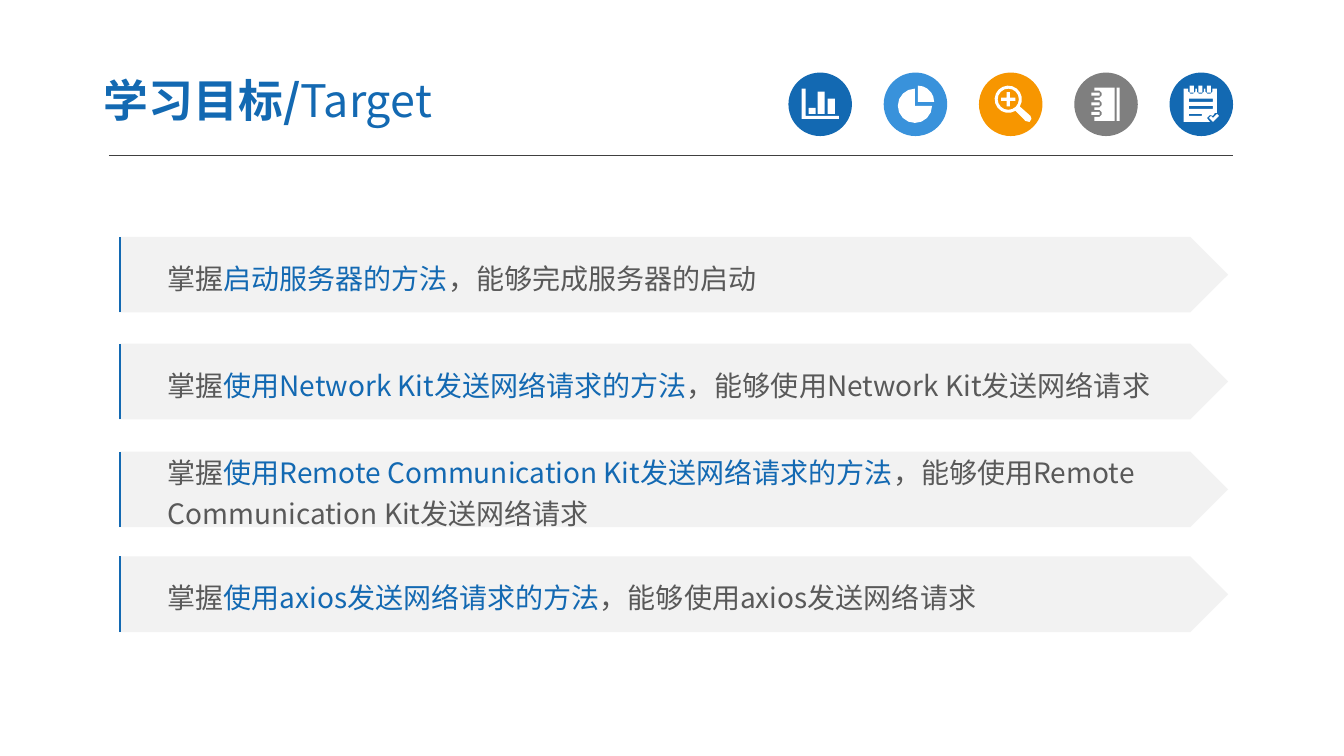
import math
import pptx
import pptx.util
import pptx.dml.color
import pptx.enum.shapes
import pptx.enum.text
import pptx.oxml.ns
import lxml.etree

Inches = pptx.util.Inches
SHAPE = pptx.enum.shapes.MSO_SHAPE
MIDDLE = pptx.enum.text.MSO_ANCHOR.MIDDLE
FONT = "Noto Sans CJK SC"
BLUE, SKY, ORANGE, GRAY, WHITE = "1369B2", "3992DB", "F79600", "7F7F7F", "FFFFFF"
BODY, PALE, RULE = "595959", "F2F2F2", "404040"

DISC = 0.63
DISC_LEFT, DISC_TOP, DISC_STEP = 7.82, 0.72, 0.945
ROW_LEFT, ROW_WIDTH, ROW_HEIGHT = 1.19, 10.99, 0.75

# Top of each row, then its lines of coloured spans
GOALS = [
    (2.35, [[("掌握", BODY), ("启动服务器的方法", BLUE), ("，能够完成服务器的启动", BODY)]]),
    (3.41, [[("掌握", BODY), ("使用Network Kit发送网络请求的方法", BLUE),
             ("，能够使用Network Kit发送网络请求", BODY)]]),
    (4.48, [[("掌握", BODY), ("使用Remote Communication Kit发送网络请求的方法", BLUE),
             ("，能够使用Remote", BODY)],
            [("Communication Kit发送网络请求", BODY)]]),
    (5.52, [[("掌握", BODY), ("使用axios发送网络请求的方法", BLUE),
             ("，能够使用axios发送网络请求", BODY)]]),
]


def rgb(color):
    return pptx.dml.color.RGBColor.from_string(color)


def add_span(para, text, size=20, color=BODY, bold=False):
    span = para.add_run()
    span.text = text
    span.font.size = pptx.util.Pt(size)
    span.font.bold = bold
    span.font.color.rgb = rgb(color)
    span.font.name = FONT
    east_asian = lxml.etree.SubElement(span.font._element, pptx.oxml.ns.qn("a:ea"))
    east_asian.set("typeface", FONT)


def paint(shape, color):
    shape.shadow.inherit = False
    shape.fill.solid()
    shape.fill.fore_color.rgb = rgb(color)
    shape.line.fill.background()


def add_filled(shapes, preset, left, top, width, height, color):
    box = shapes.add_shape(preset, Inches(left), Inches(top), Inches(width), Inches(height))
    paint(box, color)
    return box


def rect(left, top, width, height):
    right, bottom = left + width, top + height
    return [(left, top), (right, top), (right, bottom), (left, bottom)]


def arc(x, y, radius, start=0, end=360, steps=16):
    """Points clockwise along an arc, with angles in degrees from the right."""
    angles = [math.radians(start + (end - start) * step / steps) for step in range(steps + 1)]
    return [(x + radius * math.cos(angle), y + radius * math.sin(angle)) for angle in angles]


def bar_chart():
    axes = [(0.13, 0.16), (0.17, 0.16), (0.17, 0.43), (0.5, 0.43), (0.5, 0.46), (0.13, 0.46)]
    bars = ((0.2, 0.06), (0.29, 0.22), (0.39, 0.15))
    return [axes] + [rect(left, 0.41 - height, 0.07, height) for left, height in bars]


def pie_chart():
    slice_points = arc(0.34, 0.29, 0.16, -90, 0, 5)
    return [[(0.34, 0.29)] + slice_points, [(0.31, 0.33)] + arc(0.31, 0.33, 0.17, 0, 270, 12)]


def magnifier():
    x, y, arm, half = 0.29, 0.265, 0.07, 0.015
    handle = [(0.51, 0.43), (0.52, 0.46), (0.5, 0.49), (0.46, 0.48)]
    plus = [(-arm, -half), (-half, -half), (-half, -arm), (half, -arm),
            (half, -half), (arm, -half), (arm, half), (half, half),
            (half, arm), (-half, arm), (-half, half), (-arm, half)]
    return [arc(x, y, 0.135, 58, 392) + handle, arc(x, y, 0.105),
            [(x + across, y + down) for across, down in plus]]


def notebook():
    tops = [0.18 + ring * 0.095 for ring in range(3)]
    cover = [(0.2, 0.48), (0.4, 0.48), (0.4, 0.15), (0.2, 0.15)]
    for top in tops:
        cover += [(0.2, top), (0.25, top), (0.27, top + 0.02),
                  (0.27, top + 0.05), (0.25, top + 0.07), (0.2, top + 0.07)]
    rings = [rect(0.17, top + 0.02, 0.08, 0.03) for top in tops]
    return [cover, rect(0.42, 0.15, 0.03, 0.33)] + rings


def notepad():
    lefts = [0.185 + ring * 0.085 for ring in range(3)]
    sheet = [(0.14, 0.49), (0.14, 0.16)]
    for left in lefts:
        sheet += [(left, 0.16), (left, 0.19), (left + 0.02, 0.21),
                  (left + 0.05, 0.21), (left + 0.07, 0.19), (left + 0.07, 0.16)]
    sheet += [(0.47, 0.16), (0.47, 0.4), (0.45, 0.4), (0.43, 0.43),
              (0.4, 0.42), (0.37, 0.45), (0.4, 0.49)]
    rings = [rect(left + 0.015, 0.13, 0.04, 0.07) for left in lefts]
    writing = [rect(0.19, 0.26, 0.24, 0.03), rect(0.19, 0.33, 0.24, 0.03),
               rect(0.19, 0.41, 0.13, 0.02)]
    check = [(0.39, 0.45), (0.41, 0.43), (0.43, 0.45), (0.47, 0.41), (0.49, 0.43), (0.43, 0.49)]
    return [sheet] + writing + rings + [check]


def add_icon(page, index, color, contours):
    """Add a coloured disc with a white outline placed relative to its corner."""
    shapes = page.shapes.add_group_shape().shapes
    left = DISC_LEFT + index * DISC_STEP
    add_filled(shapes, SHAPE.OVAL, left, DISC_TOP, DISC, DISC, color)
    placed = [[(Inches(left + x), Inches(DISC_TOP + y)) for x, y in contour]
              for contour in contours]
    builder = shapes.build_freeform(*placed[0][0])
    for number, points in enumerate(placed):
        if number:
            builder.move_to(*points[0])
        builder.add_line_segments(points[1:], close=True)
    paint(builder.convert_to_shape(), WHITE)


def add_rule(page):
    rule = page.shapes.add_connector(pptx.enum.shapes.MSO_CONNECTOR.STRAIGHT,
                                     Inches(1.08), Inches(1.54), Inches(12.23), Inches(1.54))
    rule.line.color.rgb = rgb(RULE)
    rule.line.width = pptx.util.Pt(0.75)
    lxml.etree.SubElement(rule._element.spPr, pptx.oxml.ns.qn("a:effectLst"))


def add_title(page):
    title = page.shapes.title
    title.left, title.top = Inches(0.9), Inches(0.63)
    title.width, title.height = Inches(5.22), Inches(0.72)
    frame = title.text_frame
    frame.auto_size = pptx.enum.text.MSO_AUTO_SIZE.NONE
    frame.vertical_anchor = MIDDLE
    frame.margin_left = frame.margin_right = Inches(0.13)
    frame.margin_top = frame.margin_bottom = Inches(0.07)
    para = frame.paragraphs[0]
    para.alignment = pptx.enum.text.PP_ALIGN.LEFT
    add_span(para, "学习目标/", size=32, color=BLUE, bold=True)
    add_span(para, "Target", size=32, color=BLUE)


def add_edge(shapes, top):
    """Add the blue stroke on the left of a row, in a frame 0.17 wide."""
    left, bottom = Inches(ROW_LEFT), Inches(top + ROW_HEIGHT)
    builder = shapes.build_freeform(left + Inches(0.17), bottom)
    builder.move_to(left, bottom)
    builder.add_line_segments([(left, Inches(top))], close=False)
    edge = builder.convert_to_shape()
    edge.shadow.inherit = False
    edge.fill.background()
    edge.line.color.rgb = rgb(BLUE)
    edge.line.width = pptx.util.Pt(1.5)


def add_goal(page, top, lines):
    shapes = page.shapes.add_group_shape().shapes
    banner = add_filled(shapes, SHAPE.PENTAGON, ROW_LEFT, top, ROW_WIDTH, ROW_HEIGHT, PALE)
    frame = banner.text_frame
    frame.word_wrap = True
    frame.vertical_anchor = MIDDLE
    frame.margin_left = Inches(0.47)
    for index, spans in enumerate(lines):
        para = frame.add_paragraph() if index else frame.paragraphs[0]
        para.alignment = pptx.enum.text.PP_ALIGN.LEFT
        para.line_spacing = 1.2
        for text, color in spans:
            add_span(para, text, color=color)
    add_edge(shapes, top)


def main():
    deck = pptx.Presentation()
    deck.slide_width, deck.slide_height = Inches(13.33), Inches(7.5)
    page = deck.slides.add_slide(deck.slide_layouts.get_by_name("Title Only"))
    add_title(page)
    add_rule(page)
    icons = [(BLUE, bar_chart()), (SKY, pie_chart()), (ORANGE, magnifier()),
             (GRAY, notebook()), (BLUE, notepad())]
    for index, (color, contours) in enumerate(icons):
        add_icon(page, index, color, contours)
    for top, lines in GOALS:
        add_goal(page, top, lines)
    deck.save("out.pptx")


if __name__ == "__main__":
    main()
